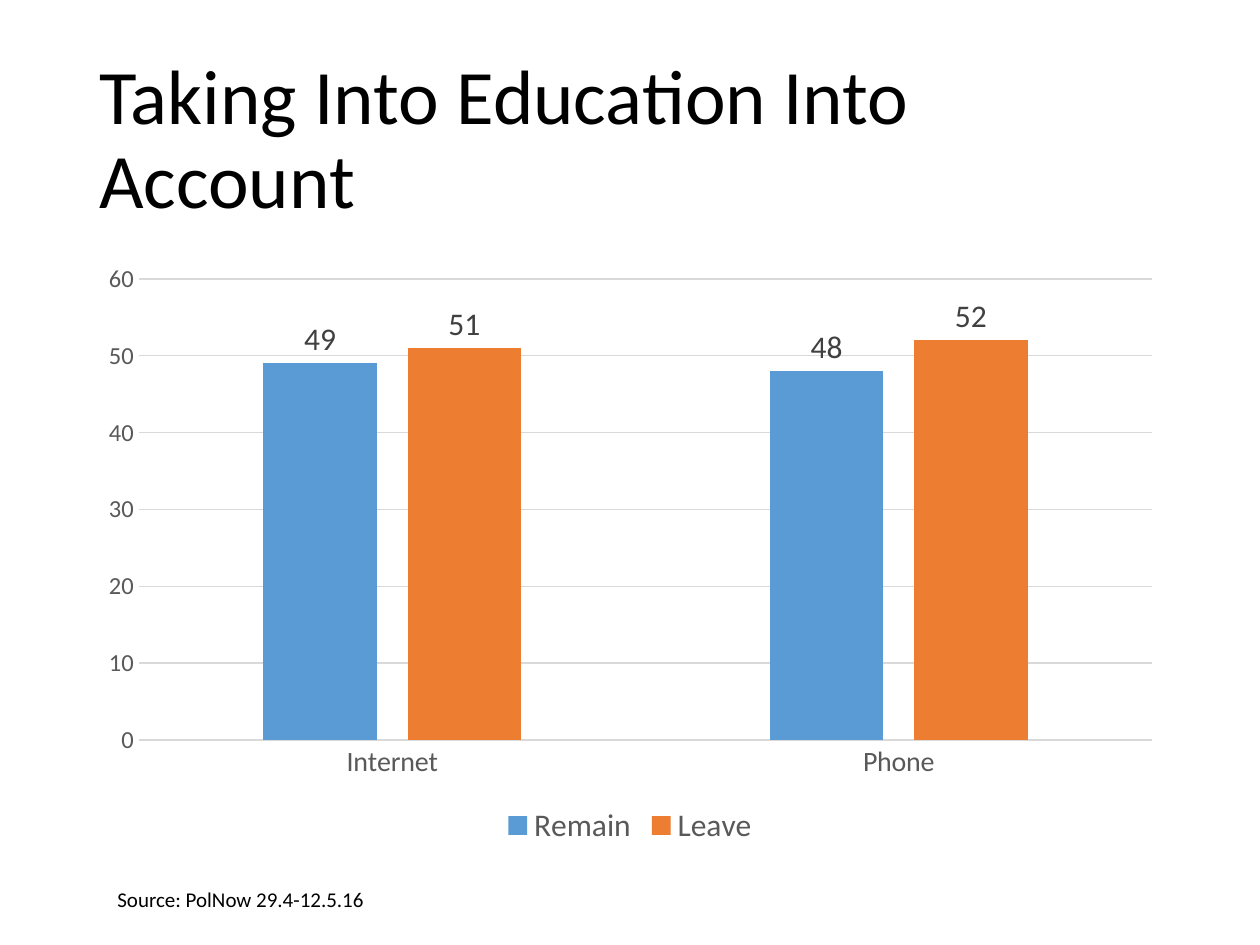
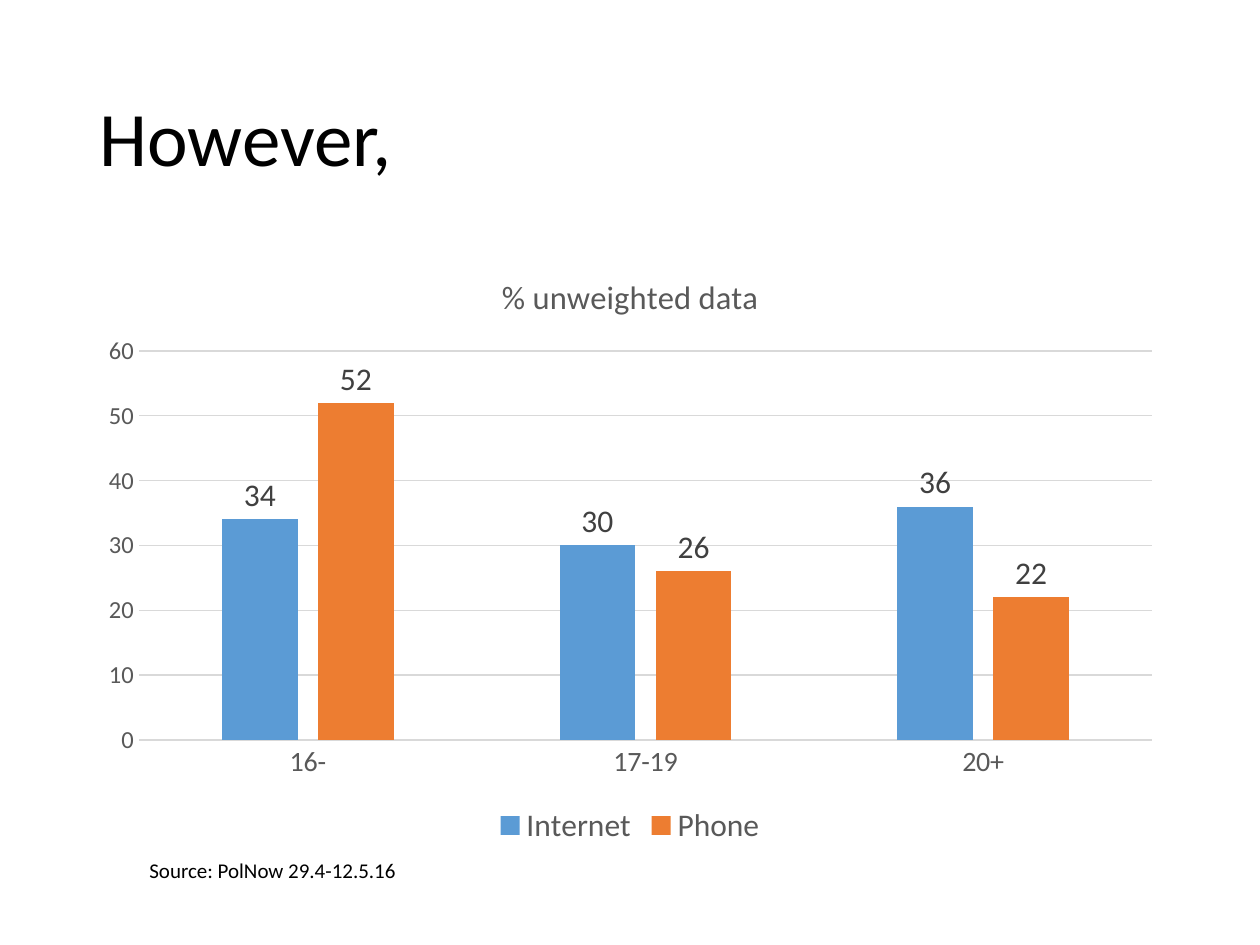
import pptx
import pptx.util
import pptx.dml.color
import pptx.chart.data
import pptx.enum.chart
import pptx.enum.text
import pptx.oxml
import pptx.oxml.ns

SCALE = 914400 / 126
FONT = "Calibri"
COLORS = {
    "ink": "000000",
    "blue": "5B9BD5",
    "orange": "ED7D31",
    "axis": "595959",
    "label": "404040",
    "grid": "D9D9D9",
}
TITLE = (87, 50, 1086, 183)
CHART = (87, 252, 1086, 599)
SOURCE = "Source: PolNow 29.4-12.5.16"
POLLS = [
    {
        "title": "Taking Into Education Into Account",
        "cats": ["Internet", "Phone"],
        "series": {"Remain": [49, 48], "Leave": [51, 52]},
        "head": None,
        "plot": (52, 27, 1013, 461),
        "source": (105, 880, 593, 38),
    },
    {
        "title": "However,",
        "cats": ["16-", "17-19", "20+"],
        "series": {"Internet": [34, 30, 36], "Phone": [52, 26, 22]},
        "head": "% unweighted data",
        "plot": (52, 99, 1013, 389),
        "source": (137, 851, 530, 38),
    },
]


def emu(box):
    return [round(n * SCALE) for n in box]


def rgb(name):
    return pptx.dml.color.RGBColor.from_string(COLORS[name])


def style(font, size, color):
    font.name = FONT
    font.size = pptx.util.Pt(size)
    font.bold = False
    font.color.rgb = rgb(color)


def rule(line):
    line.color.rgb = rgb("grid")
    line.width = pptx.util.Pt(0.75)


def add_text(slide, box, text, size=12, color="ink", middle=False, space=None):
    frame = slide.shapes.add_textbox(*emu(box)).text_frame
    frame.word_wrap = True
    if middle:
        frame.vertical_anchor = pptx.enum.text.MSO_ANCHOR.MIDDLE
    para = frame.paragraphs[0]
    para.line_spacing = space
    run = para.add_run()
    run.text = text
    style(run.font, size, color)


def set_place(owner, index, values, inner=False):
    for old in owner.findall(pptx.oxml.ns.qn("c:layout")):
        owner.remove(old)
    target = '<c:layoutTarget val="inner"/>' if inner else ""
    modes = "".join(f'<c:{k}Mode val="edge"/>' for k in "xy")
    sizes = "".join(f'<c:{k} val="{v:.4f}"/>' for k, v in zip("xywh", values))
    space = pptx.oxml.ns.nsdecls("c")
    owner.insert(index, pptx.oxml.parse_xml(
        f"<c:layout {space}><c:manualLayout>{target}{modes}{sizes}"
        "</c:manualLayout></c:layout>"))


def style_axes(chart):
    none = pptx.enum.chart.XL_TICK_MARK.NONE
    for axis, size in ((chart.category_axis, 16), (chart.value_axis, 14)):
        axis.major_tick_mark = none
        axis.minor_tick_mark = none
        style(axis.tick_labels.font, size, "axis")
    rule(chart.category_axis.format.line)
    scale = chart.value_axis
    scale.minimum_scale = 0
    scale.maximum_scale = 60
    scale.major_unit = 10
    scale.format.line.fill.background()
    scale.has_major_gridlines = True
    rule(scale.major_gridlines.format.line)


def style_bars(chart):
    plot = chart.plots[0]
    plot.gap_width = 219
    plot.overlap = -27
    plot.vary_by_categories = False
    for bars, color in zip(plot.series, ("blue", "orange")):
        bars.format.fill.solid()
        bars.format.fill.fore_color.rgb = rgb(color)
        bars.invert_if_negative = False
        labels = bars.data_labels
        labels.show_value = True
        labels.position = pptx.enum.chart.XL_LABEL_POSITION.OUTSIDE_END
        style(labels.font, 18, "label")


def add_chart(slide, box, poll):
    data = pptx.chart.data.CategoryChartData()
    data.categories = poll["cats"]
    for name, values in poll["series"].items():
        data.add_series(name, values)
    kind = pptx.enum.chart.XL_CHART_TYPE.COLUMN_CLUSTERED
    chart = slide.shapes.add_chart(kind, *emu(box), data).chart
    style(chart.font, 10, "ink")
    style_axes(chart)
    style_bars(chart)
    chart.has_legend = True
    chart.legend.position = pptx.enum.chart.XL_LEGEND_POSITION.BOTTOM
    chart.legend.include_in_layout = False
    style(chart.legend.font, 18, "axis")
    wide, high = box[2:]
    root = chart._chartSpace.chart
    chart.has_title = bool(poll["head"])
    if poll["head"]:
        para = chart.chart_title.text_frame.paragraphs[0]
        run = para.add_run()
        run.text = poll["head"]
        style(run.font, 18.6, "axis")
        title = root.find(pptx.oxml.ns.qn("c:title"))
        set_place(title, 1, (409 / wide, 16 / high))
    x, y, w, h = poll["plot"]
    set_place(root.plotArea, 0, (x / wide, y / high, w / wide, h / high), True)


def add_poll(deck, poll):
    slide = deck.slides.add_slide(deck.slide_layouts[6])
    add_text(slide, TITLE, poll["title"], size=44, middle=True, space=0.9)
    add_chart(slide, CHART, poll)
    add_text(slide, poll["source"], SOURCE)


def main():
    deck = pptx.Presentation()
    deck.slide_width, deck.slide_height = emu((1260, 945))
    for poll in POLLS:
        add_poll(deck, poll)
    deck.save("out.pptx")


if __name__ == "__main__":
    main()
